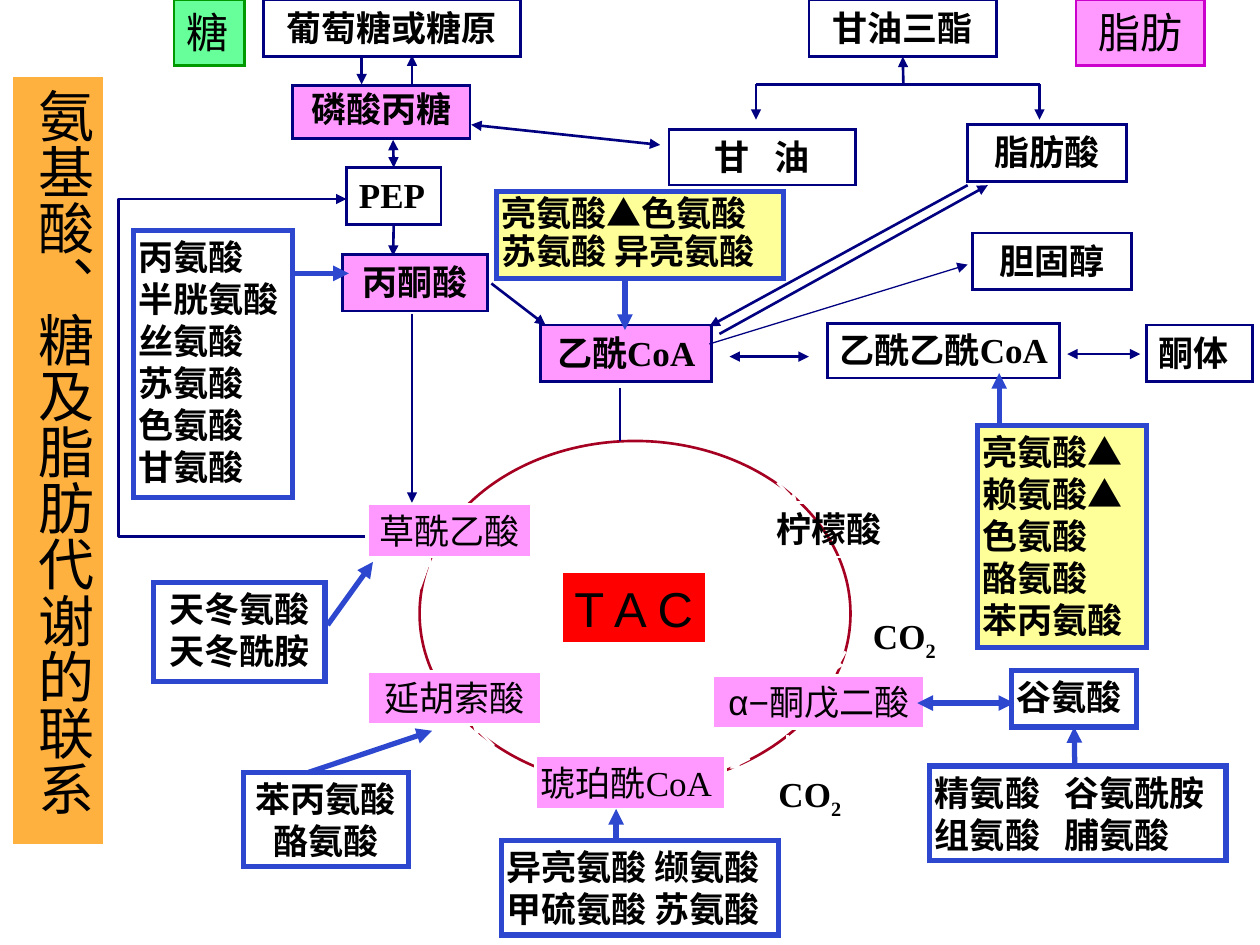
from lxml import etree
from pptx import Presentation
from pptx.dml.color import RGBColor
from pptx.enum.shapes import MSO_CONNECTOR, MSO_SHAPE
from pptx.enum.text import MSO_ANCHOR, MSO_AUTO_SIZE, PP_ALIGN
from pptx.oxml.ns import qn
from pptx.util import Inches, Pt

LEFT, CENTER = PP_ALIGN.LEFT, PP_ALIGN.CENTER
NAVY, BLUE, WHITE, BLACK = "000080", "2D48CF", "FFFFFF", "000000"
PINK, YELLOW = "FF99FF", "FFFF99"
TIMES, ARIAL, SANS = "Times New Roman", "Arial", "Noto Sans CJK SC"

TITLE = "氨基酸、糖及脂肪代谢的联系"
TITLE_PLACE = (0.09, 0.6, 0.74, 6.11)
CYCLE_PLACE = (3.33, 3.5, 3.42, 2.74)

# Looks shared by groups of boxes; a box may override single values
BASE = dict(fill=None, line=NAVY, weight=1.5, inset=(0.1, 0.05), align=CENTER, wrap=True,
            size=20, bold=True, font=TIMES, leading=None, tracking=None, tab=None)
TIGHT = dict(inset=(0.04, 0.04))
STEP = {**BASE}
KEY_STEP = {**BASE, "fill": PINK}
CYCLE = {**BASE, **TIGHT, "fill": PINK, "line": WHITE, "bold": False}
AMINO = {**BASE, **TIGHT, "line": BLUE, "weight": 3, "align": LEFT}
KETOGENIC = {**AMINO, "fill": YELLOW}
HEADING = {**BASE, "size": 24, "bold": False}
GAS = {**BASE, "line": None, "align": LEFT, "wrap": False}

# (lines, place, look, overrides)
BOXES = [
    (["琥珀酰CoA"], (4.25, 6, 1.51, 0.42), CYCLE, dict(align=LEFT, wrap=False)),
    (["延胡索酸"], (2.92, 5.33, 1.38, 0.42), CYCLE, {}),
    (["草酰乙酸"], (2.92, 4, 1.3, 0.42), CYCLE, {}),
    (["α−酮戊二酸"], (5.66, 5.36, 1.68, 0.42), CYCLE, dict(font=ARIAL)),
    (["柠檬酸"], (6.02, 3.99, 1.12, 0.43), CYCLE, dict(fill=None, bold=True)),
    (["T A C"], (4.46, 4.54, 1.15, 0.57), CYCLE,
     dict(fill="FF0000", inset=(0.1, 0.05), size=28, font=ARIAL, align=LEFT, wrap=False)),
    (["糖"], (1.38, 0, 0.56, 0.52), HEADING,
     dict(fill="66FF99", line="009900", align=LEFT, wrap=False)),
    (["脂肪"], (8.54, 0, 1.02, 0.52), HEADING, dict(fill=PINK, line="CC00CC")),
    (["葡萄糖或糖原"], (2.09, 0, 2.04, 0.45), STEP, {}),
    (["磷酸丙糖"], (2.32, 0.68, 1.41, 0.42), KEY_STEP, dict(leading=0.9)),
    (["PEP"], (2.75, 1.33, 0.75, 0.45), STEP, dict(align=LEFT, wrap=False)),
    (["丙酮酸"], (2.72, 2.02, 1.15, 0.45), KEY_STEP, {}),
    (["乙酰CoA"], (4.29, 2.58, 1.36, 0.45), KEY_STEP, dict(wrap=False)),
    (["甘油三酯"], (6.42, 0, 1.49, 0.45), STEP, {}),
    (["甘 油"], (5.31, 1.03, 1.48, 0.44), STEP, dict(tracking=500)),
    (["脂肪酸"], (7.68, 0.99, 1.26, 0.45), STEP, {}),
    (["胆固醇"], (7.72, 1.85, 1.26, 0.45), STEP, {}),
    (["乙酰乙酰CoA"], (6.57, 2.57, 1.84, 0.43), STEP, {**TIGHT, "wrap": False}),
    (["酮体"], (9.1, 2.58, 0.84, 0.45), STEP, dict(align=LEFT)),
    (["丙氨酸", "半胱氨酸", "丝氨酸", "苏氨酸", "色氨酸", "甘氨酸"],
     (1.06, 1.83, 1.26, 2.12), AMINO, {}),
    (["天冬氨酸", "天冬酰胺"], (1.22, 4.62, 1.36, 0.79), AMINO, dict(align=CENTER)),
    (["苯丙氨酸", "酪氨酸"], (1.93, 6.13, 1.31, 0.75), AMINO, dict(align=CENTER)),
    (["异亮氨酸 缬氨酸", "甲硫氨酸 苏氨酸"], (3.98, 6.67, 2.2, 0.75), AMINO, {}),
    (["谷氨酸"], (8.03, 5.32, 0.99, 0.45), AMINO, {}),
    (["精氨酸\t谷氨酰胺", "组氨酸\t脯氨酸"], (7.38, 6.08, 2.35, 0.75), AMINO, dict(tab=1.03)),
    (["亮氨酸▲色氨酸", "苏氨酸 异亮氨酸"], (3.94, 1.52, 2.28, 0.69), KETOGENIC,
     dict(leading=0.9)),
    (["亮氨酸▲", "赖氨酸▲", "色氨酸", "酪氨酸", "苯丙氨酸"],
     (7.76, 3.38, 1.34, 1.76), KETOGENIC, {}),
    (["CO₂"], (6.83, 4.83, 0.71, 0.43), GAS, {}),
    (["CO₂"], (6.08, 6.08, 0.71, 0.43), GAS, {}),
]

# Connectors by colour and weight: (start, end, arrowheads); an end may be (box name, side)
TOP, BOTTOM = 0, 2
NONE, END, BOTH = (), ("tailEnd",), ("headEnd", "tailEnd")
CONNECTORS = {
    (NAVY, 1.5): [
        ((3.27, 2.49), (3.27, 3.99), END), ((5.24, 1.15), (3.74, 0.99), BOTH),
        ((6, 0.67), (8.25, 0.67), NONE), ((6, 0.67), (6, 0.95), END),
        ((8.25, 0.67), (8.25, 0.95), END), ((7.17, 0.67), ("甘油三酯", BOTTOM), END),
        ((2.87, 0.44), (2.87, 0.67), END), ((3.27, 0.68), (3.27, 0.44), END),
        ((3.12, 1.11), ("PEP", TOP), BOTH), (("PEP", BOTTOM), (3.12, 2.03), END),
        ((3.9, 2.25), (4.33, 2.58), END), ((8.47, 2.81), (9.05, 2.81), BOTH),
        ((5.79, 2.83), (6.42, 2.83), BOTH), ((4.92, 3.08), (4.92, 3.5), NONE),
        ((7.68, 1.47), (5.63, 2.59), END), ((5.71, 2.65), (7.84, 1.47), END),
    ],
    (NAVY, 0.75): [((5.63, 2.73), (7.68, 2.1), END)],
    (BLUE, 3): [
        ((2.32, 2.17), (2.77, 2.17), END), ((4.96, 2.23), (4.96, 2.62), END),
        ((2.6, 4.96), (2.96, 4.46), END), ((2.45, 6.13), (3.43, 5.8), END),
        ((4.89, 6.67), (4.89, 6.42), END), ((7.93, 3.38), (7.93, 2.96), END),
        ((7.28, 5.58), (8.05, 5.58), BOTH), ((8.53, 6.08), ("谷氨酸", BOTTOM), END),
    ],
    (WHITE, 1.5): [
        ((6.71, 5.17), (6.62, 5.33), END), ((6.75, 4.67), (7, 4.92), END),
        ((5.95, 6.02), (5.79, 6.1), END), ((6.25, 5.83), (6.25, 6.17), END),
        ((6.17, 3.83), (6.33, 4), END), ((3.33, 4.67), (3.42, 4.42), END),
        ((3.92, 5.92), (3.75, 5.75), END),
    ],
}
RETURN_START, RETURN_END, RETURN_X = (2.9, 4.26), (2.75, 1.58), 0.94


def color(value):
    return RGBColor.from_string(value)


def paint(shape, fill, line, weight):
    if fill:
        shape.fill.solid()
        shape.fill.fore_color.rgb = color(fill)
    else:
        shape.fill.background()
    if line:
        shape.line.color.rgb = color(line)
        shape.line.width = Pt(weight)
        etree.SubElement(shape.line._get_or_add_ln(), qn("a:miter"), lim="800000")
    else:
        shape.line.fill.background()


def set_frame(frame, inset, wrap):
    across, down = (Inches(value) for value in inset)
    settings = dict(margin_left=across, margin_right=across, margin_top=down, margin_bottom=down,
                    word_wrap=wrap, vertical_anchor=MSO_ANCHOR.TOP, auto_size=MSO_AUTO_SIZE.NONE)
    for name, value in settings.items():
        setattr(frame, name, value)


def add_span(para, text, look):
    span = para.add_run()
    span.text = text
    for name, value in dict(name=look["font"], size=Pt(look["size"]), bold=look["bold"]).items():
        setattr(span.font, name, value)
    span.font.color.rgb = color(BLACK)
    if look["tracking"]:
        span.font._element.set("spc", str(look["tracking"]))
    return span


def add_box(page, lines, place, look):
    box = page.shapes.add_shape(MSO_SHAPE.RECTANGLE, *map(Inches, place))
    box.shadow.inherit = False
    paint(box, look["fill"], look["line"], look["weight"])
    frame = box.text_frame
    set_frame(frame, look["inset"], look["wrap"])
    for index, line in enumerate(lines):
        para = frame.add_paragraph() if index else frame.paragraphs[0]
        para.alignment = look["align"]
        para.line_spacing = look["leading"]
        if look["tab"]:
            tabs = etree.SubElement(para._p.get_or_add_pPr(), qn("a:tabLst"))
            etree.SubElement(tabs, qn("a:tab"), pos=str(Inches(look["tab"])), algn="l")
        add_span(para, line.removesuffix("₂"), look)
        if line.endswith("₂"):
            add_span(para, "2", look).font._element.set("baseline", "-25000")
    return box


def add_line(page, start, end, heads, line, weight, boxes, kind=MSO_CONNECTOR.STRAIGHT):
    joined = [isinstance(point[0], str) for point in (start, end)]
    points = [(0, 0) if join else point for join, point in zip(joined, (start, end))]
    connector = page.shapes.add_connector(kind, *(Inches(v) for point in points for v in point))
    if joined[0]:
        connector.begin_connect(boxes[start[0]], start[1])
    if joined[1]:
        connector.end_connect(boxes[end[0]], end[1])
    connector.line.color.rgb = color(line)
    connector.line.width = Pt(weight)
    outline = connector.line._get_or_add_ln()
    for head in heads:
        etree.SubElement(outline, qn("a:" + head), type="triangle")
    etree.SubElement(connector._element.spPr, qn("a:effectLst"))
    return connector


def main():
    deck = Presentation()
    deck.slide_width, deck.slide_height = Inches(10), Inches(7.5)
    page = deck.slides.add_slide(deck.slide_layouts[5])

    # Vertical title
    title = page.shapes.title
    title.left, title.top, title.width, title.height = map(Inches, TITLE_PLACE)
    paint(title, "FFB13F", WHITE, 1.5)
    set_frame(title.text_frame, (0.05, 0), True)
    title.text_frame.margin_top = Inches(0.1)
    title.text_frame._txBody.bodyPr.set("vert", "eaVert")
    para = title.text_frame.paragraphs[0]
    para.alignment = CENTER
    span = add_span(para, TITLE, {**BASE, "size": 32, "bold": False, "font": SANS})
    etree.SubElement(span.font._element, qn("a:ea"), typeface=SANS)

    # Cycle ring
    ring = page.shapes.add_shape(MSO_SHAPE.OVAL, *map(Inches, CYCLE_PLACE))
    ring.shadow.inherit = False
    paint(ring, None, "A50021", 1.5)

    # Metabolites and amino acids
    boxes = {lines[0]: add_box(page, lines, place, {**look, **extra})
             for lines, place, look, extra in BOXES}

    # Pathways
    for (line, weight), routes in CONNECTORS.items():
        for start, end, heads in routes:
            add_line(page, start, end, heads, line, weight, boxes)

    # Return path from oxaloacetate to PEP
    bent = add_line(page, RETURN_START, RETURN_END, END, NAVY, 1.5, boxes, MSO_CONNECTOR.ELBOW)
    reach = (RETURN_START[0] - RETURN_X) / (RETURN_START[0] - RETURN_END[0])
    guides = bent._element.spPr.find(qn("a:prstGeom")).find(qn("a:avLst"))
    etree.SubElement(guides, qn("a:gd"), name="adj1", fmla=f"val {round(reach * 100000)}")

    deck.save("out.pptx")


if __name__ == "__main__":
    main()
